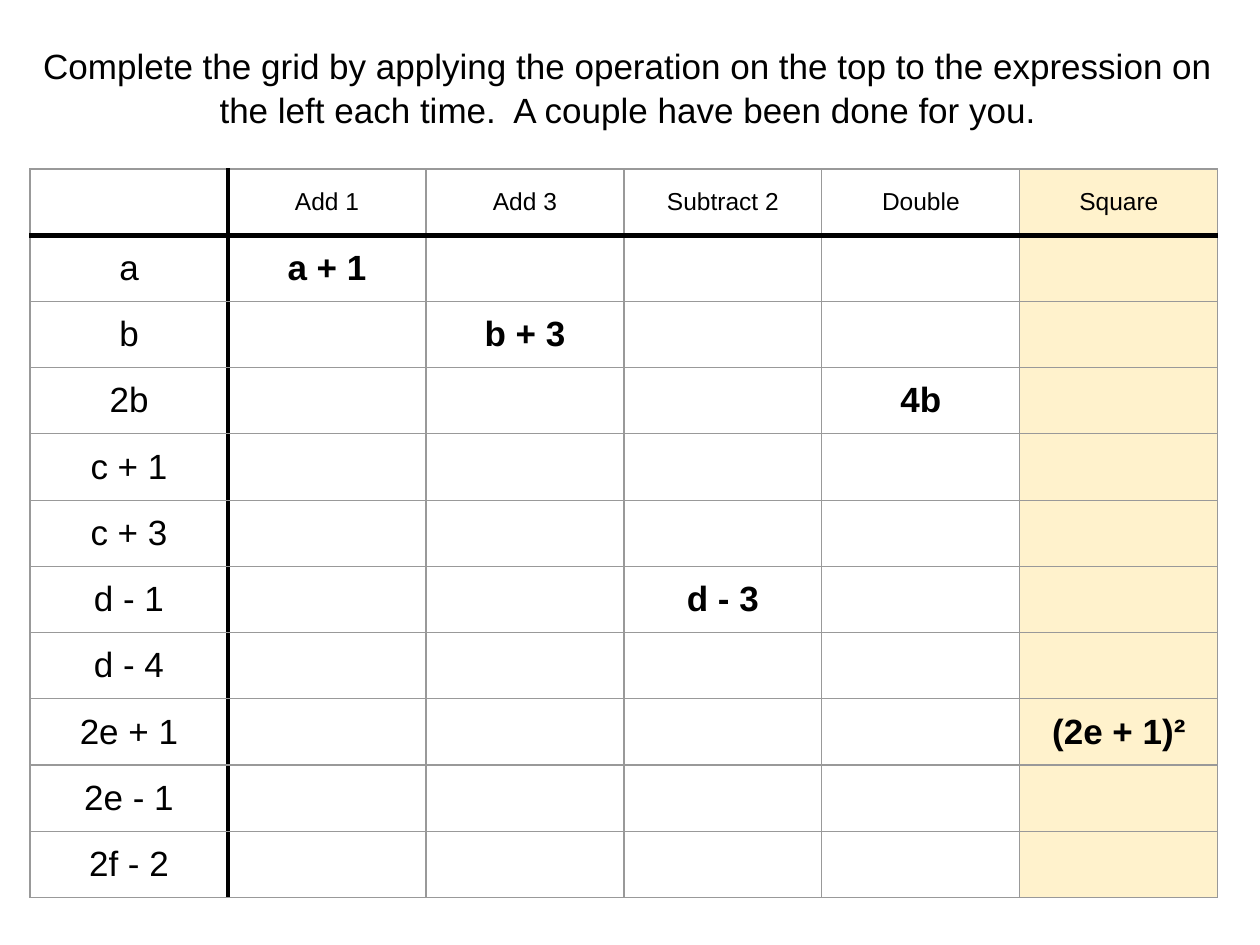
from dataclasses import dataclass

import lxml.etree
import pptx
import pptx.dml.color
import pptx.enum.text
import pptx.oxml.ns
import pptx.table
import pptx.util

PX = 914400 / 126
FONT = "Arial"
COLORS = {"text": "000000", "rule": "000000", "grid": "999999", "square": "FFF2CC"}
INSTRUCTION = (
    "Complete the grid by applying the operation on the top to the expression "
    "on the left each time.  A couple have been done for you."
)
OPERATIONS = ["Add 1", "Add 3", "Subtract 2", "Double", "Square"]
EXPRESSIONS = ["a", "b", "2b", "c + 1", "c + 3", "d - 1", "d - 4", "2e + 1", "2e - 1", "2f - 2"]


@dataclass(frozen=True)
class Answer:
    expression: str
    operation: str
    text: str


@dataclass(frozen=True)
class Border:
    color: str
    width: float


ANSWERS = [
    Answer("a", "Add 1", "a + 1"),
    Answer("b", "Add 3", "b + 3"),
    Answer("2b", "Double", "4b"),
    Answer("d - 1", "Subtract 2", "d - 3"),
    Answer("2e + 1", "Square", "(2e + 1)²"),
]
THIN = Border("grid", 0.75)
THICK = Border("rule", 3)


def px(n: int) -> int:
    return round(n * PX)


def rgb(name: str) -> pptx.dml.color.RGBColor:
    return pptx.dml.color.RGBColor.from_string(COLORS[name])


def style_text(tf, size: int, bold: bool = False) -> None:
    p = tf.paragraphs[0]
    p.alignment = pptx.enum.text.PP_ALIGN.CENTER
    p.font.name = FONT
    p.font.size = pptx.util.Pt(size)
    p.font.bold = bold
    p.font.color.rgb = rgb("text")


def set_margins(box) -> None:
    box.margin_left = box.margin_right = pptx.util.Inches(0.1)
    box.margin_top = box.margin_bottom = pptx.util.Inches(0.1)


def add_border(cell: pptx.table._Cell, side: str, border: Border) -> None:
    qn = pptx.oxml.ns.qn
    tcPr = cell._tc.get_or_add_tcPr()
    ln = lxml.etree.SubElement(tcPr, qn(f"a:ln{side}"), w=str(pptx.util.Pt(border.width)))
    fill = lxml.etree.SubElement(ln, qn("a:solidFill"))
    lxml.etree.SubElement(fill, qn("a:srgbClr"), val=COLORS[border.color])


def format_cell(cell: pptx.table._Cell, row: int, col: int, text: str) -> None:
    add_border(cell, "L", THICK if col == 1 else THIN)
    add_border(cell, "R", THICK if col == 0 else THIN)
    add_border(cell, "T", THICK if row == 1 else THIN)
    add_border(cell, "B", THICK if row == 0 else THIN)
    if col == len(OPERATIONS):
        cell.fill.solid()
        cell.fill.fore_color.rgb = rgb("square")
    else:
        cell.fill.background()
    set_margins(cell)
    cell.vertical_anchor = pptx.enum.text.MSO_ANCHOR.MIDDLE
    if text:
        cell.text = text
    style_text(cell.text_frame, 14 if row == 0 else 20, row > 0 and col > 0)


def add_instruction(s) -> None:
    sp = s.shapes.title
    sp.left, sp.top, sp.width, sp.height = px(30), px(30), px(1196), px(107)
    tf = sp.text_frame
    tf.text = INSTRUCTION
    tf.word_wrap = True
    tf.auto_size = pptx.enum.text.MSO_AUTO_SIZE.NONE
    tf.vertical_anchor = pptx.enum.text.MSO_ANCHOR.TOP
    set_margins(tf)
    style_text(tf, 20)
    tf.paragraphs[0].line_spacing = 1.05


def add_grid(s) -> None:
    answers = {(a.expression, a.operation): a.text for a in ANSWERS}
    rows = [["", *OPERATIONS]]
    rows += [[e, *(answers.get((e, o), "") for o in OPERATIONS)] for e in EXPRESSIONS]
    frame = s.shapes.add_table(len(rows), len(rows[0]), px(30), px(169), px(1188), px(729))
    table = frame.table
    table.first_row = False
    table.horz_banding = False
    for i, row in enumerate(rows):
        for j, text in enumerate(row):
            format_cell(table.cell(i, j), i, j, text)


def main() -> None:
    prs = pptx.Presentation()
    prs.slide_width, prs.slide_height = px(1260), px(945)
    s = prs.slides.add_slide(prs.slide_layouts[5])
    add_instruction(s)
    add_grid(s)
    prs.save("out.pptx")


if __name__ == "__main__":
    main()
